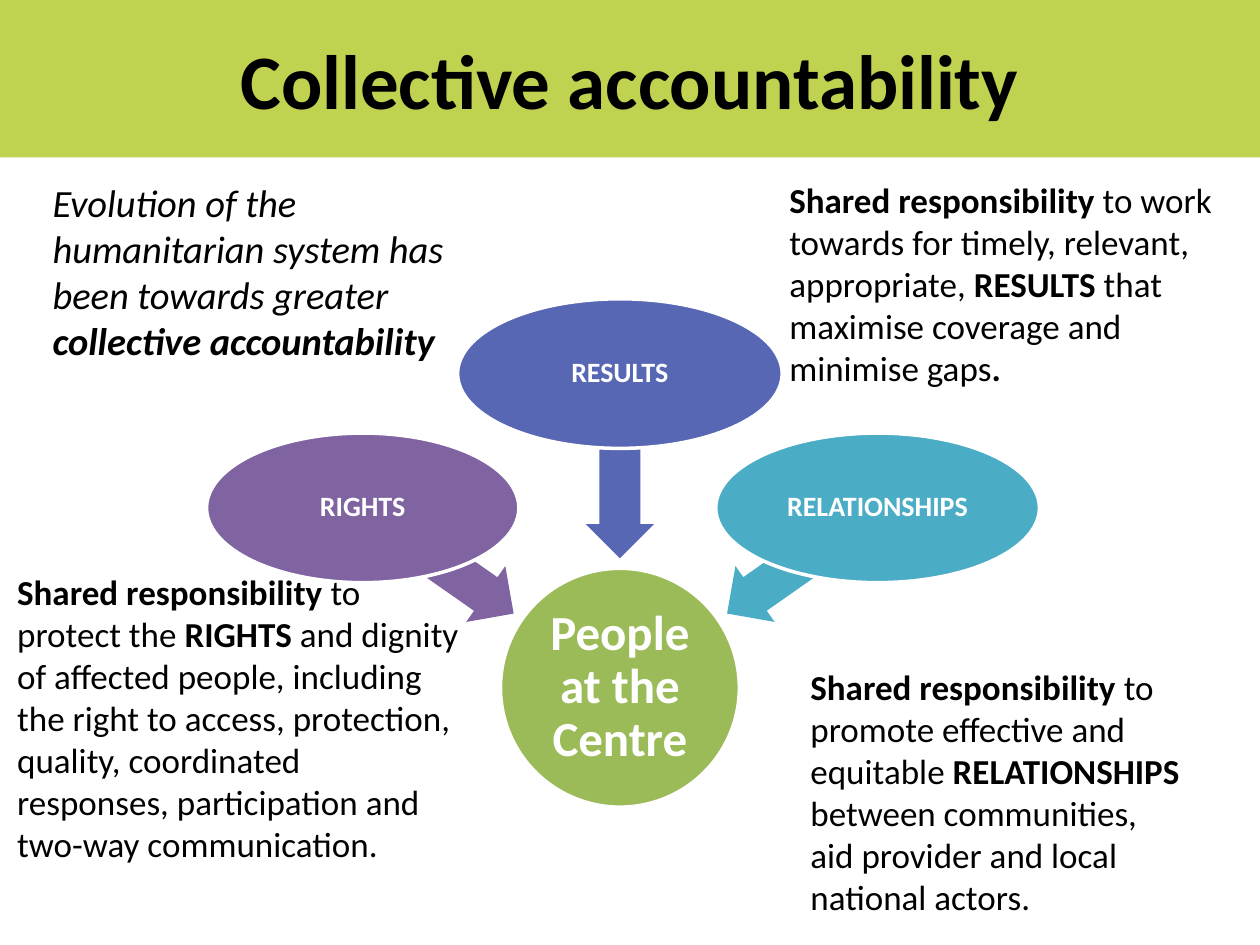
from dataclasses import dataclass

from pptx import Presentation
from pptx.dml.color import RGBColor
from pptx.enum.shapes import MSO_SHAPE
from pptx.enum.text import MSO_ANCHOR, MSO_AUTO_SIZE, PP_ALIGN
from pptx.util import Pt

BLACK = "000000"
WHITE = "FFFFFF"
INSET = ("margin_left", "margin_right", "margin_top", "margin_bottom")


@dataclass
class Box:
    left: float
    top: float
    width: float
    height: float

    def place(self) -> list:
        return [Pt(v) for v in (self.left, self.top, self.width, self.height)]


@dataclass
class Pillar:
    label: str
    color: str
    oval: Box
    arrow: Box
    turn: int


@dataclass
class Note:
    text: str
    box: Box
    size: int = 20
    italic: bool = False


def paint(color, code: str) -> None:
    color.rgb = RGBColor.from_string(code)


def write(frame, text: str, size: int, code: str, italic: bool = False) -> None:
    """Text between asterisks is bold."""
    para = frame.paragraphs[0]
    for index, part in enumerate(text.split("*")):
        if not part:
            continue
        run = para.add_run()
        run.text = part
        style = {"name": "Calibri", "size": Pt(size), "bold": index % 2 == 1, "italic": italic}
        for key, value in style.items():
            setattr(run.font, key, value)
        paint(run.font.color, code)


def draw(slide, kind: MSO_SHAPE, box: Box, code: str, edge: bool = False):
    shape = slide.shapes.add_shape(kind, *box.place())
    shape.shadow.inherit = False
    shape.fill.solid()
    paint(shape.fill.fore_color, code)
    if edge:
        paint(shape.line.color, WHITE)
        shape.line.width = Pt(2)
    else:
        shape.line.fill.background()
    return shape


def center(shape, text: str, size: int, code: str) -> None:
    frame = shape.text_frame
    format = {"word_wrap": True, "vertical_anchor": MSO_ANCHOR.MIDDLE}
    format.update({side: Pt(2) for side in INSET})
    for key, value in format.items():
        setattr(frame, key, value)
    write(frame, f"*{text}*", size, code)
    frame.paragraphs[0].alignment = PP_ALIGN.CENTER
    frame.paragraphs[0].line_spacing = 0.9


def add_oval(slide, box: Box, code: str, text: str, size: int) -> None:
    center(draw(slide, MSO_SHAPE.OVAL, box, code, edge=True), text, size, WHITE)


def add_pillar(slide, pillar: Pillar) -> None:
    arrow = draw(slide, MSO_SHAPE.LEFT_ARROW, pillar.arrow, pillar.color)
    arrow.rotation = pillar.turn
    arrow.adjustments[0] = 0.6
    arrow.adjustments[1] = 0.5
    add_oval(slide, pillar.oval, pillar.color, pillar.label, 16)


def add_note(slide, note: Note) -> None:
    frame = slide.shapes.add_textbox(*note.box.place()).text_frame
    frame.word_wrap = True
    frame.auto_size = MSO_AUTO_SIZE.SHAPE_TO_FIT_TEXT
    write(frame, note.text, note.size, BLACK, note.italic)


PILLARS = [
    Pillar("RIGHTS", "8064A2", Box(118, 247.5, 178.5, 85.5), Box(198, 301, 105, 39), 215),
    Pillar("RESULTS", "5767B4", Box(261.5, 170.75, 185.5, 85.5), Box(301.75, 247, 105, 39), 270),
    Pillar("RELATIONSHIPS", "4BACC6", Box(409, 247.5, 185, 85.5), Box(406, 301, 105, 39), 325),
]

NOTES = [
    Note("*Shared responsibility *to work towards for timely, relevant, appropriate, "
         "*RESULTS* that maximise coverage and minimise gaps*.*", Box(444, 98.5, 260.5, 128)),
    Note("*Shared responsibility *to protect the *RIGHTS *and dignity of affected people, "
         "including the right to access, protection, quality, coordinated responses, "
         "participation and two-way communication.", Box(2.75, 322.5, 266.5, 177)),
    Note("*Shared responsibility *to promote effective and equitable *RELATIONSHIPS* "
         "between communities, aid provider and local national actors.",
         Box(456, 376.75, 228, 152.5)),
    Note("Evolution of the humanitarian system has been towards greater "
         "*collective accountability*", Box(23, 98.5, 266.5, 114), 22, True),
]


def main() -> None:
    deck = Presentation()
    deck.slide_width, deck.slide_height = Pt(720), Pt(540)
    slide = deck.slides.add_slide(deck.slide_layouts[6])
    add_oval(slide, Box(286, 324.75, 136.5, 136.5), "9BBB59", "People at the Centre", 28)
    for pillar in PILLARS:
        add_pillar(slide, pillar)
    for note in NOTES:
        add_note(slide, note)
    band = draw(slide, MSO_SHAPE.RECTANGLE, Box(0, 0, 720, 90), "C1D150")
    center(band, "Collective accountability", 44, BLACK)
    band.text_frame.paragraphs[0].line_spacing = 1.0
    deck.save("out.pptx")


if __name__ == "__main__":
    main()
